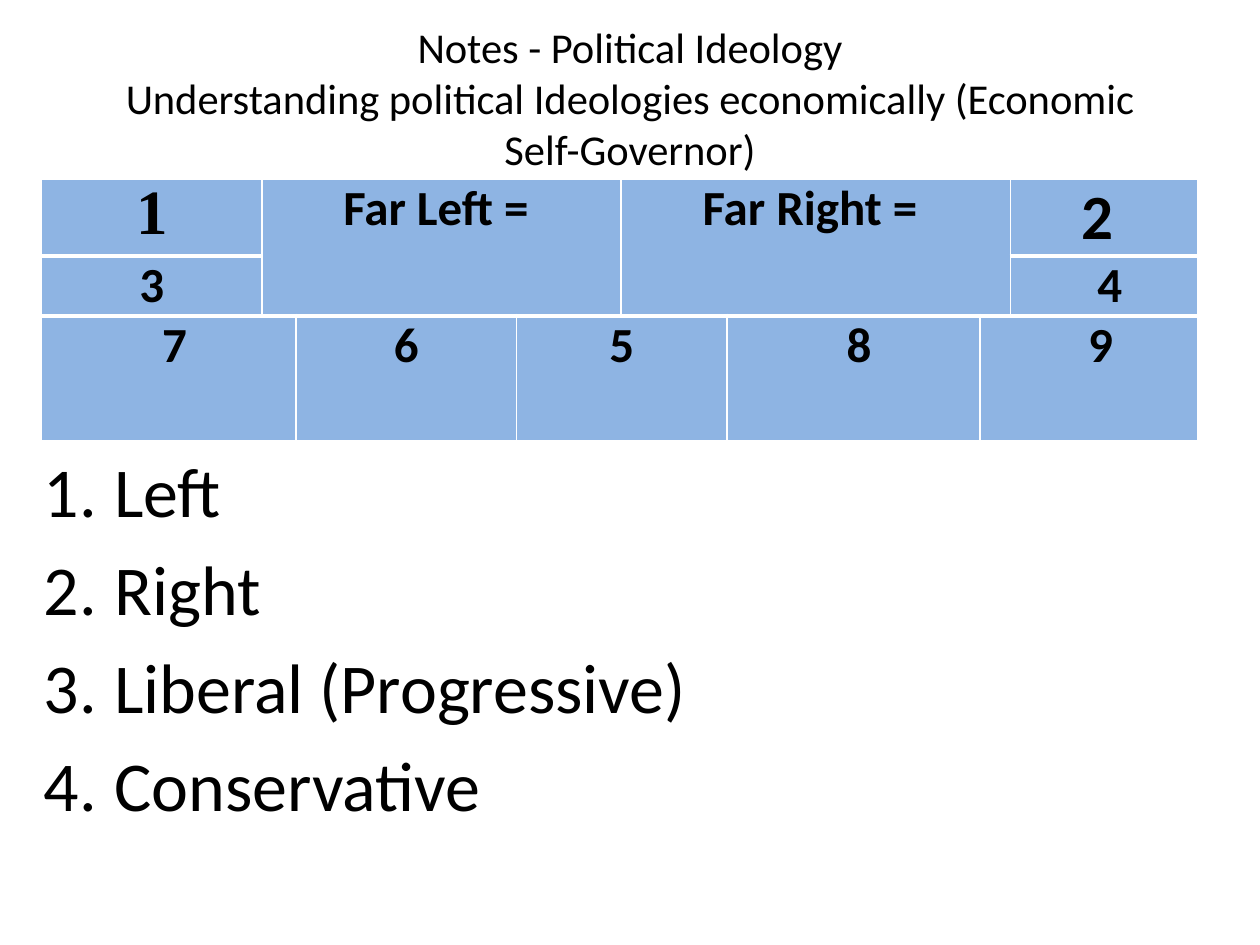
from pptx import Presentation
from pptx.dml.color import RGBColor
from pptx.enum.text import MSO_ANCHOR as Anchor, MSO_AUTO_SIZE as Fit, PP_ALIGN as Align
from pptx.oxml.ns import qn
from pptx.util import Inches, Pt
from lxml.etree import SubElement

BLACK = RGBColor(0, 0, 0)
WHITE = RGBColor(255, 255, 255)
BLUE = RGBColor(0x8E, 0xB4, 0xE3)
FONT = "Calibri"

COLS = [1.75, 0.25, 1.75, 0.83, 0.84, 2.01, 0.24, 1.49]
ROWS = [0.57, 0.44, 0.99]
# row, column, rows spanned, columns spanned, text, size, font, left pad, right pad
CELLS = [
    (0, 0, 1, 1, "1", 36, "Times New Roman", 0, 0),
    (0, 1, 2, 3, "Far Left =", 28, FONT, 0, 0.09),
    (0, 4, 2, 3, "Far Right =", 28, FONT, 0, 0.09),
    (0, 7, 1, 1, "2", 36, FONT, 0, 0.11),
    (1, 0, 1, 1, "3", 28, FONT, 0, 0),
    (1, 7, 1, 1, "4", 28, FONT, 0.09, 0),
    (2, 0, 1, 2, "7", 28, FONT, 0.09, 0),
    (2, 2, 1, 1, "6", 28, FONT, 0, 0),
    (2, 3, 1, 2, "5", 28, FONT, 0, 0),
    (2, 5, 1, 1, "8", 28, FONT, 0.09, 0),
    (2, 6, 1, 2, "9", 28, FONT, 0.18, 0),
]
TERMS = ["Left", "Right", "Liberal (Progressive)", "Conservative"]


def style(par, size, name=FONT, bold=False):
    font = par.font
    font.size, font.name, font.bold = Pt(size), name, bold
    font.color.rgb = BLACK


def edge(cell, row):
    """White cell borders, thick between rows."""
    props = cell._tc.get_or_add_tcPr()
    widths = {"lnL": 1, "lnR": 1, "lnT": 3 if row else 1,
              "lnB": 3 if row < len(ROWS) - 1 else 1}
    for spot, (tag, width) in enumerate(widths.items()):
        line = SubElement(props, qn("a:" + tag), w=str(Pt(width)))
        fill = SubElement(line, qn("a:solidFill"))
        SubElement(fill, qn("a:srgbClr"), val=str(WHITE))
        props.insert(spot, line)


def add_title(slide, left, top, width, height):
    title = slide.shapes.title
    title.left, title.top, title.width, title.height = left, top, width, height
    frame = title.text_frame
    frame.text = ("Notes - Political Ideology\vUnderstanding political "
                  "Ideologies economically (Economic Self-Governor)")
    frame.word_wrap, frame.auto_size = True, Fit.NONE
    frame.vertical_anchor = Anchor.MIDDLE
    frame.margin_bottom = Inches(0.68)  # lifts the text clear of the table
    par = frame.paragraphs[0]
    par.alignment = Align.CENTER
    style(par, 24.3)


def add_grid(slide, left, top, width, height):
    table = slide.shapes.add_table(len(ROWS), len(COLS), left, top, width, height).table
    table.horz_banding = False
    for col, size in zip(table.columns, COLS):
        col.width = Inches(size)
    for i, size in enumerate(ROWS):
        table.rows[i].height = Inches(size)
        for cell in table.rows[i].cells:
            cell.fill.solid()
            cell.fill.fore_color.rgb = BLUE
            cell.margin_top = cell.margin_bottom = 0
            edge(cell, i)
    for row, col, down, across, text, size, name, before, after in CELLS:
        cell = table.cell(row, col)
        if down * across > 1:
            cell.merge(table.cell(row + down - 1, col + across - 1))
        cell.margin_left = Inches(0.07 + before)
        cell.margin_right = Inches(0.07 + after)
        cell.text = text
        par = cell.text_frame.paragraphs[0]
        par.alignment = Align.CENTER
        style(par, size, name, True)


def add_terms(slide, left, top, width, height):
    frame = slide.shapes.add_textbox(left, top, width, height).text_frame
    frame.word_wrap = True
    frame.text = "\n".join(TERMS)
    for i, par in enumerate(frame.paragraphs):
        props = par._p.get_or_add_pPr()
        props.set("marL", str(Inches(0.56)))
        props.set("indent", str(Inches(-0.56)))
        SubElement(props, qn("a:buFont"), typeface="+mj-lt")
        SubElement(props, qn("a:buAutoNum"), type="arabicPeriod")
        if i:
            par.space_before = Pt(8)
        style(par, 40)


def main():
    deck = Presentation()
    deck.slide_width, deck.slide_height = Inches(10), Inches(7.5)
    slide = deck.slides.add_slide(deck.slide_layouts[5])
    add_title(slide, Inches(0.75), Inches(0.5), Inches(8.5), Inches(1.17))
    add_grid(slide, Inches(0.33), Inches(1.42), Inches(sum(COLS)), Inches(sum(ROWS)))
    add_terms(slide, Inches(0.25), Inches(3.5), Inches(9.42), Inches(3.42))
    deck.save("out.pptx")


if __name__ == "__main__":
    main()
